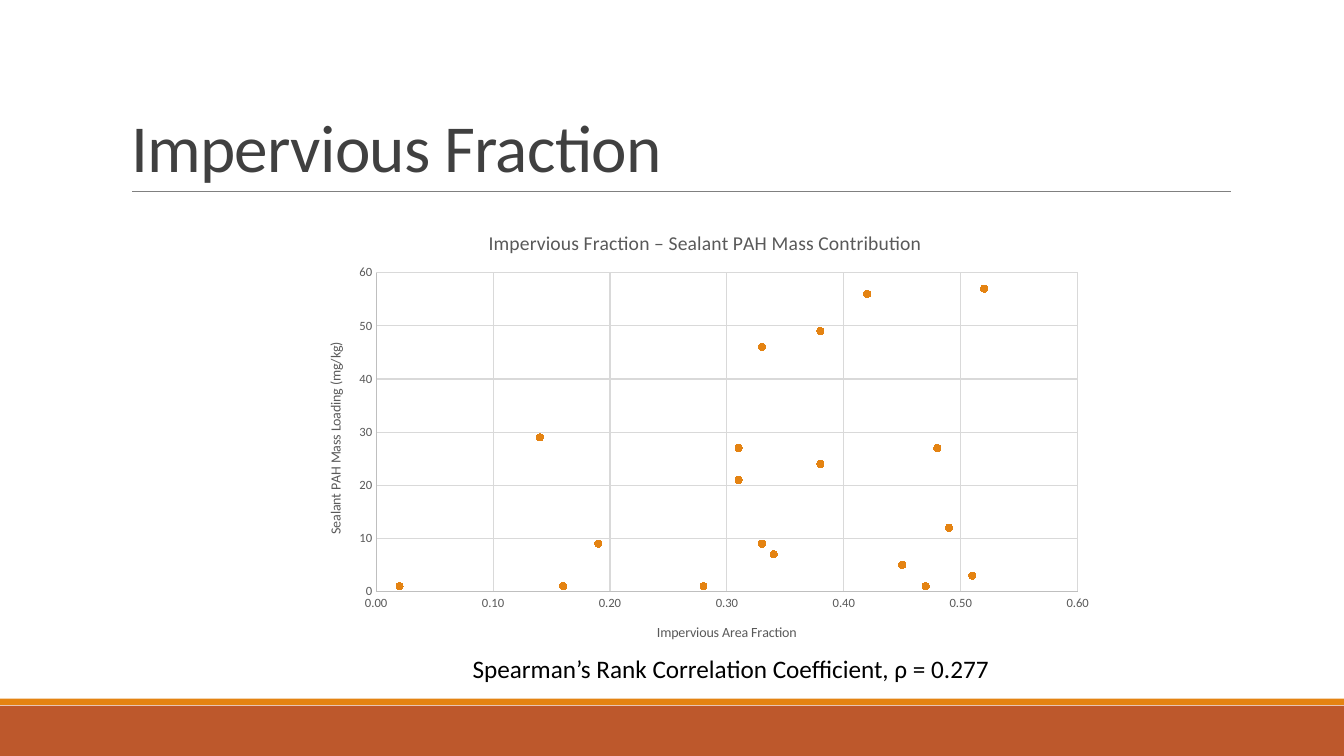
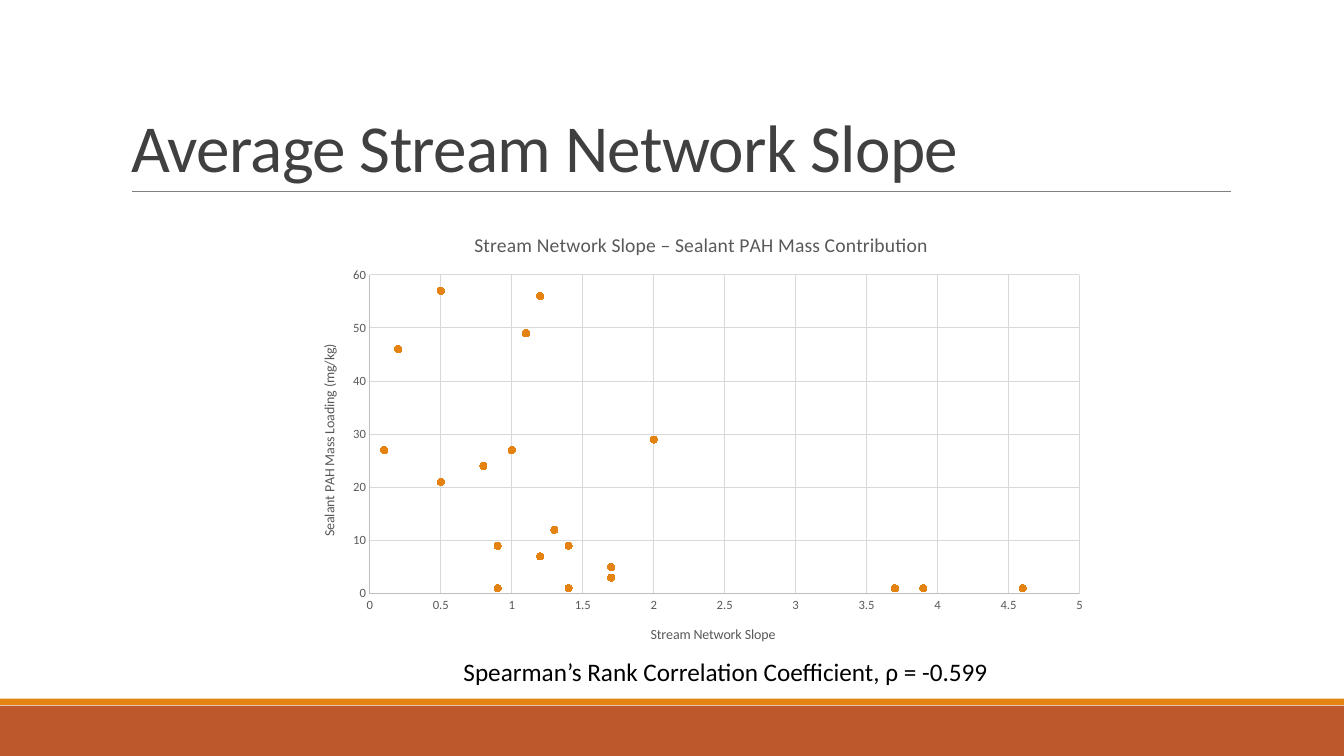
from dataclasses import dataclass

from lxml.etree import SubElement
from pptx import Presentation
from pptx.chart.axis import ValueAxis
from pptx.chart.chart import Chart
from pptx.chart.data import XyChartData
from pptx.dml.color import RGBColor
from pptx.dml.fill import FillFormat
from pptx.enum.chart import XL_CHART_TYPE, XL_MARKER_STYLE, XL_TICK_MARK
from pptx.enum.shapes import MSO_CONNECTOR, MSO_SHAPE
from pptx.enum.text import MSO_ANCHOR, MSO_AUTO_SIZE, PP_ALIGN
from pptx.oxml.ns import qn
from pptx.oxml.xmlchemy import OxmlElement
from pptx.slide import Slide, SlideLayout
from pptx.text.text import TextFrame
from pptx.util import Pt

FONT = "Calibri"
RUST = "BD582C"
ORANGE = "E48312"
RULE_GRAY = "808080"
TITLE_GRAY = "404040"
CHART_GRAY = "595959"
AXIS_GRAY = "BFBFBF"
GRID_GRAY = "D9D9D9"
BLACK = "000000"
PAGE_WIDTH, PAGE_HEIGHT = 960, 540
LOADINGS = (12, 1, 49, 3, 21, 46, 5, 9, 7, 56, 57, 1, 27, 27, 24, 9, 1, 1, 1, 29)


@dataclass(frozen=True)
class Band:
    top: float
    height: float
    color: str


@dataclass(frozen=True)
class Study:
    title: str
    measure: str
    axis_title: str
    coefficient: str
    values: tuple[float, ...]
    maximum: float
    step: float
    number_format: str
    chart_left: float
    chart_top: float
    caption_left: float
    caption_top: float
    plot_width: float
    heading_left: float


BANDS = (Band(504, 36, RUST), Band(499, 4.6, ORANGE))
STUDIES = (
    Study("Impervious Fraction", "Impervious Fraction", "Impervious Area Fraction", "0.277",
          (0.49, 0.28, 0.38, 0.51, 0.31, 0.33, 0.45, 0.19, 0.34, 0.42,
           0.52, 0.02, 0.48, 0.31, 0.38, 0.33, 0.28, 0.47, 0.16, 0.14),
          0.6, 0.1, "0.00", 214, 148.5, 330.5, 463, 0.87, 0.23),
    Study("Average Stream Network Slope", "Stream Network Slope", "Stream Network Slope", "-0.599",
          (1.3, 3.9, 1.1, 1.7, 0.5, 0.2, 1.7, 1.4, 1.2, 1.2,
           0.5, 3.7, 1, 0.1, 0.8, 0.9, 4.6, 1.4, 0.9, 2),
          5, 0.5, "General", 209.5, 150, 324, 465, 0.88, 0.22),
)


def paint(fill: FillFormat, color: str) -> None:
    fill.solid()
    fill.fore_color.rgb = RGBColor.from_string(color)


def write(frame: TextFrame, text: str, *, size: float, color: str = CHART_GRAY,
          align: PP_ALIGN | None = None, line_spacing: float | None = None,
          tracking: int = 0) -> None:
    para = frame.paragraphs[0]
    para.alignment = align
    para.line_spacing = line_spacing
    span = para.add_run()
    span.text = text
    span.font.name = FONT
    span.font.size = Pt(size)
    span.font.bold = False
    paint(span.font.fill, color)
    if tracking:
        span.font._element.set("spc", str(tracking))


def place(parent: OxmlElement, index: int, **fractions: float) -> None:
    for old in parent.findall(qn("c:layout")):
        parent.remove(old)
    layout = OxmlElement("c:layout")
    manual = SubElement(layout, qn("c:manualLayout"))
    if "w" in fractions:
        SubElement(manual, qn("c:layoutTarget")).set("val", "inner")
    for mode in ("xMode", "yMode"):
        SubElement(manual, qn(f"c:{mode}")).set("val", "edge")
    for name, value in fractions.items():
        SubElement(manual, qn(f"c:{name}")).set("val", str(value))
    parent.insert(index, layout)


def decorate(layout: SlideLayout, page: Slide) -> None:
    for band in BANDS:
        bar = page.shapes.add_shape(MSO_SHAPE.RECTANGLE, Pt(0), Pt(band.top),
                                    Pt(PAGE_WIDTH), Pt(band.height))
        bar.shadow.inherit = False
        paint(bar.fill, band.color)
        bar.line.fill.background()
        layout.shapes.element.append(bar.element)
    rule = page.shapes.add_connector(MSO_CONNECTOR.STRAIGHT, Pt(94.5), Pt(136.8),
                                     Pt(879), Pt(136.8))
    rule.line.width = Pt(0.5)
    paint(rule.line.fill, RULE_GRAY)
    SubElement(rule.element.spPr, qn("a:effectLst"))
    layout.shapes.element.append(rule.element)


def add_title(page: Slide, text: str) -> None:
    title = page.shapes.title
    title.left, title.top, title.width, title.height = Pt(86.4), Pt(22), Pt(792), Pt(114.5)
    frame = title.text_frame
    frame.auto_size = MSO_AUTO_SIZE.NONE
    frame.vertical_anchor = MSO_ANCHOR.BOTTOM
    write(frame, text, size=48, color=TITLE_GRAY, align=PP_ALIGN.LEFT,
          line_spacing=0.85, tracking=-50)


def style_axis(axis: ValueAxis, title: str, maximum: float, step: float,
               number_format: str, left: float, top: float) -> None:
    axis.minimum_scale, axis.maximum_scale, axis.major_unit = 0, maximum, step
    axis.major_tick_mark = axis.minor_tick_mark = XL_TICK_MARK.NONE
    axis.has_major_gridlines = True
    for line, color in ((axis.format.line, AXIS_GRAY),
                        (axis.major_gridlines.format.line, GRID_GRAY)):
        line.width = Pt(0.75)
        paint(line.fill, color)
    labels = axis.tick_labels
    labels.number_format = number_format
    labels.number_format_is_linked = False
    labels.font.name = FONT
    labels.font.size = Pt(9)
    paint(labels.font.fill, CHART_GRAY)
    write(axis.axis_title.text_frame, title, size=10)
    place(axis.axis_title.element, 1, x=left, y=top)


def style_points(chart: Chart) -> None:
    plot = chart.plots[0]
    plot.vary_by_categories = False
    series = plot.series[0]
    series.format.line.fill.background()
    series.marker.style = XL_MARKER_STYLE.CIRCLE
    series.marker.size = 5
    paint(series.marker.format.fill, ORANGE)
    paint(series.marker.format.line.fill, ORANGE)
    for smooth in series._element.findall(qn("c:smooth")):
        smooth.set("val", "0")


def add_scatter(page: Slide, study: Study) -> None:
    data = XyChartData()
    points = data.add_series("Series 1")
    for value, loading in zip(study.values, LOADINGS):
        points.add_data_point(value, loading)
    chart = page.shapes.add_chart(XL_CHART_TYPE.XY_SCATTER, Pt(study.chart_left),
                                  Pt(study.chart_top), Pt(576), Pt(324), data).chart
    chart.has_legend = False
    chart.font.name = FONT
    chart.font.size = Pt(10)
    paint(chart.font.fill, BLACK)
    write(chart.chart_title.text_frame, f"{study.measure} – Sealant PAH Mass Contribution", size=14)
    place(chart.chart_title.element, 1, x=study.heading_left, y=0.04)
    style_axis(chart.category_axis, study.axis_title, study.maximum, study.step,
               study.number_format, 0.44, 0.91)
    style_axis(chart.value_axis, "Sealant PAH Mass Loading (mg/kg)", 60, 10,
               "General", 0.03, 0.29)
    style_points(chart)
    plot_area = chart.element.find(f".//{qn('c:plotArea')}")
    place(plot_area, 0, x=0.095, y=0.143, w=study.plot_width, h=0.703)


def add_caption(page: Slide, study: Study) -> None:
    box = page.shapes.add_textbox(Pt(study.caption_left), Pt(study.caption_top), Pt(415), Pt(29))
    box.text_frame.word_wrap = True
    write(box.text_frame, f"Spearman’s Rank Correlation Coefficient, ρ = {study.coefficient}",
          size=18, color=BLACK)


def main() -> None:
    deck = Presentation()
    deck.slide_width, deck.slide_height = Pt(PAGE_WIDTH), Pt(PAGE_HEIGHT)
    layout = deck.slide_layouts.get_by_name("Title Only")
    pages = [deck.slides.add_slide(layout) for _ in STUDIES]
    decorate(layout, pages[0])
    for page, study in zip(pages, STUDIES):
        add_title(page, study.title)
        add_scatter(page, study)
        add_caption(page, study)
    deck.save("out.pptx")


if __name__ == "__main__":
    main()
